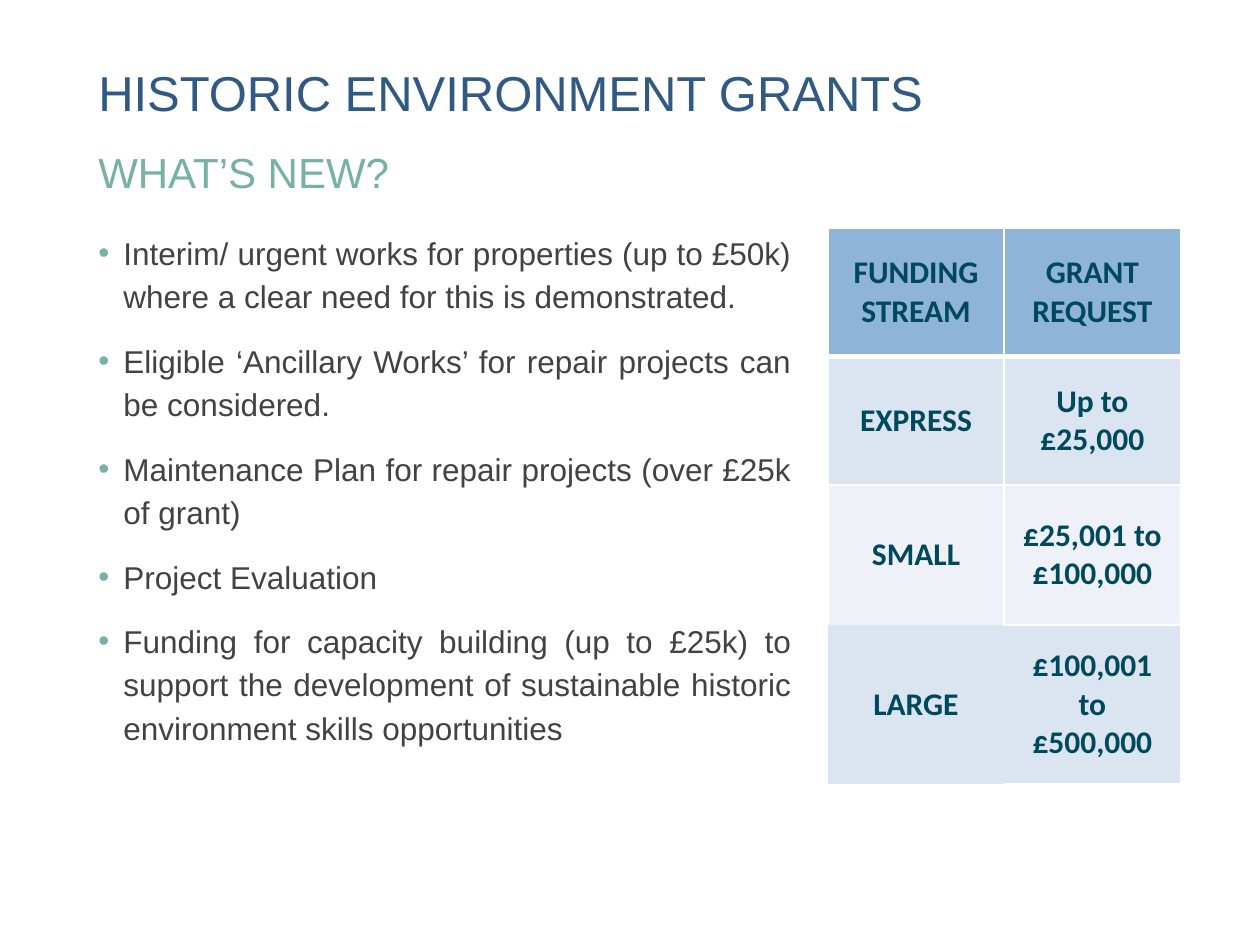
from lxml.etree import SubElement
from pptx import Presentation
from pptx.dml.color import RGBColor
from pptx.enum.text import MSO_ANCHOR as Anchor, MSO_AUTO_SIZE as AutoSize, PP_ALIGN as Align
from pptx.oxml.ns import qn
from pptx.util import Inches, Pt

COLOURS = {
    "title": "305983", "accent": "77B0A4", "body": "424242", "cell_text": "00485B",
    "header": "8FB4D9", "band": "DBE5F1", "light": "EEF2F8", "border": "FFFFFF",
}
BULLETS = [
    "Interim/ urgent works for properties (up to £50k) where a clear need for this is demonstrated.",
    "Eligible ‘Ancillary Works’ for repair projects can be considered.",
    "Maintenance Plan for repair projects (over £25k of grant)",
    "Project Evaluation",
    "Funding for capacity building (up to £25k) to support the development of "
    "sustainable historic environment skills opportunities",
]
# Row height, fill and the two cell texts
FUNDING_ROWS = [
    (1.02, "header", ("FUNDING STREAM", "GRANT REQUEST")),
    (1.02, "band", ("EXPRESS", "Up to £25,000")),
    (1.11, "light", ("SMALL", "£25,001 to £100,000")),
    (1.26, "band", ("LARGE", "£100,001 to £500,000")),
]
# Sides without a line, for cells that differ from the full grid
OPEN_SIDES = {(2, 0): "B", (3, 0): "LRTB", (3, 1): "L"}
INDENT = Inches(0.2)


def rgb(name):
    return RGBColor.from_string(COLOURS[name])


def write_text(para, text, *, size, colour, font="Arial", bold=False,
               align=Align.LEFT, spacing=1.0, before=0, after=0):
    para.alignment = align
    para.line_spacing = spacing
    para.space_before, para.space_after = Pt(before), Pt(after)
    span = para.add_run()
    span.text = text
    span.font.size, span.font.name, span.font.bold = Pt(size), font, bold
    span.font.color.rgb = rgb(colour)


def set_bullet(para, char=None):
    """Give the paragraph a hanging bullet, or none when char is omitted."""
    props = para._p.get_or_add_pPr()
    indent = INDENT if char else 0
    props.set("marL", str(indent))
    props.set("indent", str(-indent))
    if not char:
        SubElement(props, qn("a:buNone"))
        return
    colour = SubElement(props, qn("a:buClr"))
    SubElement(colour, qn("a:srgbClr"), val=COLOURS["accent"])
    SubElement(props, qn("a:buFont"), typeface="Arial")
    SubElement(props, qn("a:buChar"), char=char)
    tabs = SubElement(props, qn("a:tabLst"))
    SubElement(tabs, qn("a:tab"), pos=str(indent), algn="l")


def place(box, left, top, width, height):
    """Position a placeholder and return its plain, top-anchored text frame."""
    box.left, box.top = Inches(left), Inches(top)
    box.width, box.height = Inches(width), Inches(height)
    frame = box.text_frame
    frame.margin_left = frame.margin_right = frame.margin_top = frame.margin_bottom = 0
    frame.vertical_anchor = Anchor.TOP
    frame.word_wrap = True
    frame.auto_size = AutoSize.NONE
    return frame


def add_bullets(frame, items):
    for number, item in enumerate(items):
        para = frame.add_paragraph() if number else frame.paragraphs[0]
        set_bullet(para, "•")
        write_text(para, item, size=18, colour="body", align=Align.JUSTIFY,
                   spacing=1.15, before=6 if number else 0, after=6)


def set_borders(cell, row, column):
    props = cell._tc.get_or_add_tcPr()
    for side in "LRTB":
        # The rule below the header is heavier than the others
        heavy = (row, side) in ((0, "B"), (1, "T"))
        line = SubElement(props, qn(f"a:ln{side}"), w=str(Pt(3 if heavy else 1)))
        if side in OPEN_SIDES.get((row, column), ""):
            SubElement(line, qn("a:noFill"))
        else:
            fill = SubElement(line, qn("a:solidFill"))
            SubElement(fill, qn("a:srgbClr"), val=COLOURS["border"])


def add_funding_table(page):
    height = sum(row[0] for row in FUNDING_ROWS)
    table = page.shapes.add_table(len(FUNDING_ROWS), 2, Inches(6.57), Inches(1.81),
                                  Inches(2.8), Inches(height)).table
    for row, (row_height, fill, texts) in enumerate(FUNDING_ROWS):
        table.rows[row].height = Inches(row_height)
        for column, text in enumerate(texts):
            cell = table.cell(row, column)
            set_borders(cell, row, column)
            cell.fill.solid()
            cell.fill.fore_color.rgb = rgb(fill)
            cell.vertical_anchor = Anchor.MIDDLE
            write_text(cell.text_frame.paragraphs[0], text, size=18, colour="cell_text",
                       font="Calibri", bold=True, align=Align.CENTER)


def main():
    deck = Presentation()
    deck.slide_width, deck.slide_height = Inches(10), Inches(7.5)
    page = deck.slides.add_slide(deck.slide_layouts[3])
    title, subtitle, body = page.placeholders

    # Headings
    frame = place(title, 0.78, 0.55, 8.73, 0.66)
    write_text(frame.paragraphs[0], "HISTORIC ENVIRONMENT GRANTS",
               size=28, colour="title", spacing=0.9)
    frame = place(subtitle, 0.78, 1.21, 8.74, 0.43)
    set_bullet(frame.paragraphs[0])
    write_text(frame.paragraphs[0], "WHAT’S NEW?",
               size=24, colour="accent", spacing=0.9, after=6)

    # List and funding table
    add_bullets(place(body, 0.78, 1.81, 5.5, 4.86), BULLETS)
    add_funding_table(page)

    deck.save("out.pptx")


if __name__ == "__main__":
    main()
